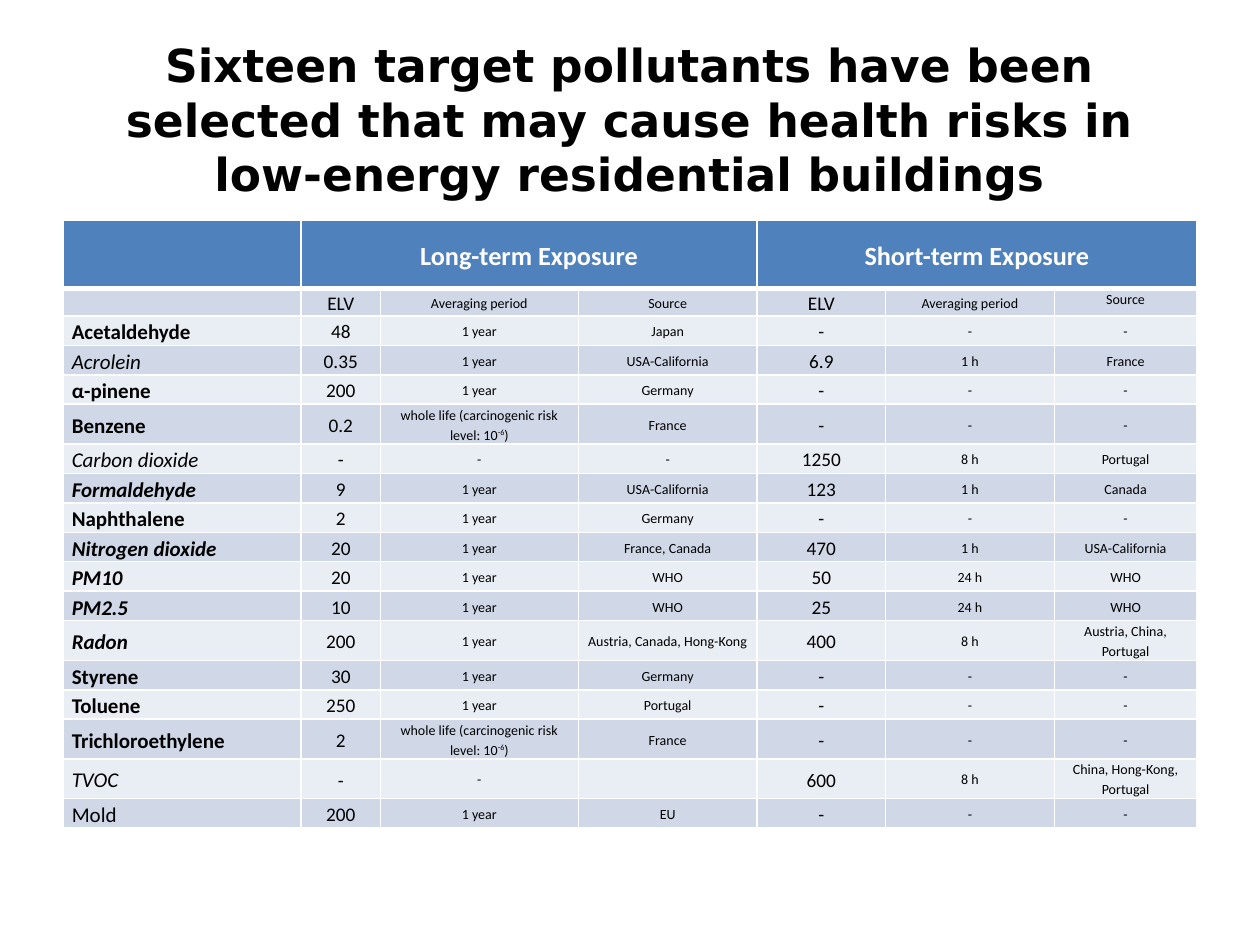
from dataclasses import dataclass

from lxml.etree import SubElement
from pptx import Presentation
from pptx.dml.color import RGBColor
from pptx.enum.text import MSO_ANCHOR, PP_ALIGN
from pptx.oxml.ns import qn
from pptx.util import Inches, Pt

HEADER_FILL = "4F81BD"
BAND_FILLS = ("D0D8E8", "E9EDF4")
WHITE, BLACK = "FFFFFF", "000000"

COLUMN_WIDTHS = (1.89, 0.63, 1.57, 1.42, 1.02, 1.34, 1.13)
HEADER_HEIGHT, SUBHEADER_HEIGHT = 0.54, 0.2
SINGLE_HEIGHT, DOUBLE_HEIGHT = 0.23, 0.29
NAME_SIZE, ELV_SIZE, DETAIL_SIZE = 12, 11, 8
VALUE_SIZES = (ELV_SIZE, DETAIL_SIZE, DETAIL_SIZE) * 2

SUBHEADINGS = ("ELV", "Averaging period", "Source") * 2
LAST_COLUMN = len(COLUMN_WIDTHS) - 1
NONE = ("-", "-", "-")
LIFETIME = "whole life (carcinogenic risk level: 10^-6^)"  # carets enclose a superscript


@dataclass(frozen=True)
class Style:
    size: float
    color: str = BLACK
    bold: bool = False
    italic: bool = False
    font: str = "Calibri"


@dataclass(frozen=True)
class Pollutant:
    name: str
    long_term: tuple[str, str, str]
    short_term: tuple[str, str, str] = NONE
    bold: bool = False
    italic: bool = False
    two_lines: bool = False


POLLUTANTS = (
    Pollutant("Acetaldehyde", ("48", "1 year", "Japan"), bold=True),
    Pollutant("Acrolein", ("0.35", "1 year", "USA-California"), ("6.9", "1 h", "France"), italic=True),
    Pollutant("α-pinene", ("200", "1 year", "Germany"), bold=True),
    Pollutant("Benzene", ("0.2", LIFETIME, "France"), bold=True, two_lines=True),
    Pollutant("Carbon dioxide", NONE, ("1250", "8 h", "Portugal"), italic=True),
    Pollutant("Formaldehyde", ("9", "1 year", "USA-California"), ("123", "1 h", "Canada"),
              bold=True, italic=True),
    Pollutant("Naphthalene", ("2", "1 year", "Germany"), bold=True),
    Pollutant("Nitrogen dioxide", ("20", "1 year", "France, Canada"), ("470", "1 h", "USA-California"),
              bold=True, italic=True),
    Pollutant("PM10", ("20", "1 year", "WHO"), ("50", "24 h", "WHO"), bold=True, italic=True),
    Pollutant("PM2.5", ("10", "1 year", "WHO"), ("25", "24 h", "WHO"), bold=True, italic=True),
    Pollutant("Radon", ("200", "1 year", "Austria, Canada, Hong-Kong"),
              ("400", "8 h", "Austria, China, Portugal"), bold=True, italic=True, two_lines=True),
    Pollutant("Styrene", ("30", "1 year", "Germany"), bold=True),
    Pollutant("Toluene", ("250", "1 year", "Portugal"), bold=True),
    Pollutant("Trichloroethylene", ("2", LIFETIME, "France"), bold=True, two_lines=True),
    Pollutant("TVOC", ("-", "-", ""), ("600", "8 h", "China, Hong-Kong, Portugal"),
              italic=True, two_lines=True),
    Pollutant("Mold", ("200", "1 year", "EU")),
)


def rgb(color: str) -> RGBColor:
    return RGBColor.from_string(color)


def format_run(run, style: Style) -> None:
    font = run.font
    font.name, font.size = style.font, Pt(style.size)
    font.bold, font.italic = style.bold, style.italic
    font.color.rgb = rgb(style.color)


def write_paragraph(paragraph, text: str, style: Style, align=PP_ALIGN.CENTER) -> None:
    """Write text in one style, raising whatever stands between carets."""
    paragraph.alignment = align
    for index, part in enumerate(text.split("^")):
        if not part:
            continue
        run = paragraph.add_run()
        run.text = part
        format_run(run, style)
        if index % 2:
            run.font._element.set("baseline", "30000")
    if not text:  # an empty cell must not stretch its row
        SubElement(paragraph._p, qn("a:endParaRPr"), sz=str(style.size * 100))


def add_border(cell, side: str, width: float) -> None:
    line = SubElement(cell._tc.get_or_add_tcPr(), qn(f"a:{side}"), w=str(Pt(width)))
    SubElement(SubElement(line, qn("a:solidFill")), qn("a:srgbClr"), val=WHITE)


def paint_cell(cell, fill: str, top: float = 1, bottom: float = 1) -> None:
    for side, width in (("lnL", 1), ("lnR", 1), ("lnT", top), ("lnB", bottom)):
        add_border(cell, side, width)
    cell.fill.solid()
    cell.fill.fore_color.rgb = rgb(fill)


def write_cell(cell, text: str, style: Style, align=PP_ALIGN.CENTER) -> None:
    cell.margin_left = cell.margin_right = Inches(0.07)
    cell.margin_top = cell.margin_bottom = 0
    cell.vertical_anchor = MSO_ANCHOR.MIDDLE
    paragraph = cell.text_frame.paragraphs[0]
    paragraph.line_spacing = 1.15
    write_paragraph(paragraph, text, style, align)


def add_title(slide, text: str) -> None:
    frame = slide.shapes.add_textbox(Inches(0.5), Inches(0.32), Inches(9), Inches(1.25)).text_frame
    frame.word_wrap = True
    frame.vertical_anchor = MSO_ANCHOR.MIDDLE
    write_paragraph(frame.paragraphs[0], text, Style(26, bold=True, font="DejaVu Sans"))


def fill_header(table) -> None:
    for column in range(len(COLUMN_WIDTHS)):
        paint_cell(table.cell(0, column), HEADER_FILL, bottom=3)
    for column, heading in ((1, "Long-term Exposure"), (4, "Short-term Exposure")):
        table.cell(0, column).merge(table.cell(0, column + 2))
        write_cell(table.cell(0, column), heading, Style(15, WHITE, bold=True))


def fill_row(table, row: int, name: str, name_style: Style, values: tuple[str, ...]) -> None:
    for column in range(len(COLUMN_WIDTHS)):
        paint_cell(table.cell(row, column), BAND_FILLS[(row - 1) % 2], top=3 if row == 1 else 1)
    write_cell(table.cell(row, 0), name, name_style, PP_ALIGN.LEFT)
    for column, (value, size) in enumerate(zip(values, VALUE_SIZES), start=1):
        write_cell(table.cell(row, column), value, Style(size))


def add_exposure_table(slide) -> None:
    heights = [HEADER_HEIGHT, SUBHEADER_HEIGHT]
    heights += [DOUBLE_HEIGHT if p.two_lines else SINGLE_HEIGHT for p in POLLUTANTS]
    table = slide.shapes.add_table(len(heights), len(COLUMN_WIDTHS), Inches(0.5), Inches(1.75),
                                   Inches(sum(COLUMN_WIDTHS)), Inches(sum(heights))).table
    table.horz_banding = False
    for column, width in zip(table.columns, COLUMN_WIDTHS):
        column.width = Inches(width)
    for row, height in zip(table.rows, heights):
        row.height = Inches(height)

    fill_header(table)
    fill_row(table, 1, "", Style(DETAIL_SIZE), SUBHEADINGS)
    for row, pollutant in enumerate(POLLUTANTS, start=2):
        name_style = Style(NAME_SIZE, bold=pollutant.bold, italic=pollutant.italic)
        fill_row(table, row, pollutant.name, name_style, pollutant.long_term + pollutant.short_term)
    table.cell(1, LAST_COLUMN).vertical_anchor = MSO_ANCHOR.TOP


def main() -> None:
    presentation = Presentation()
    presentation.slide_width, presentation.slide_height = Inches(10), Inches(7.5)
    slide = presentation.slides.add_slide(presentation.slide_layouts[6])
    add_exposure_table(slide)
    add_title(slide, "Sixteen target pollutants have been selected that may cause health risks "
                     "in low-energy residential buildings")
    presentation.save("out.pptx")


if __name__ == "__main__":
    main()
